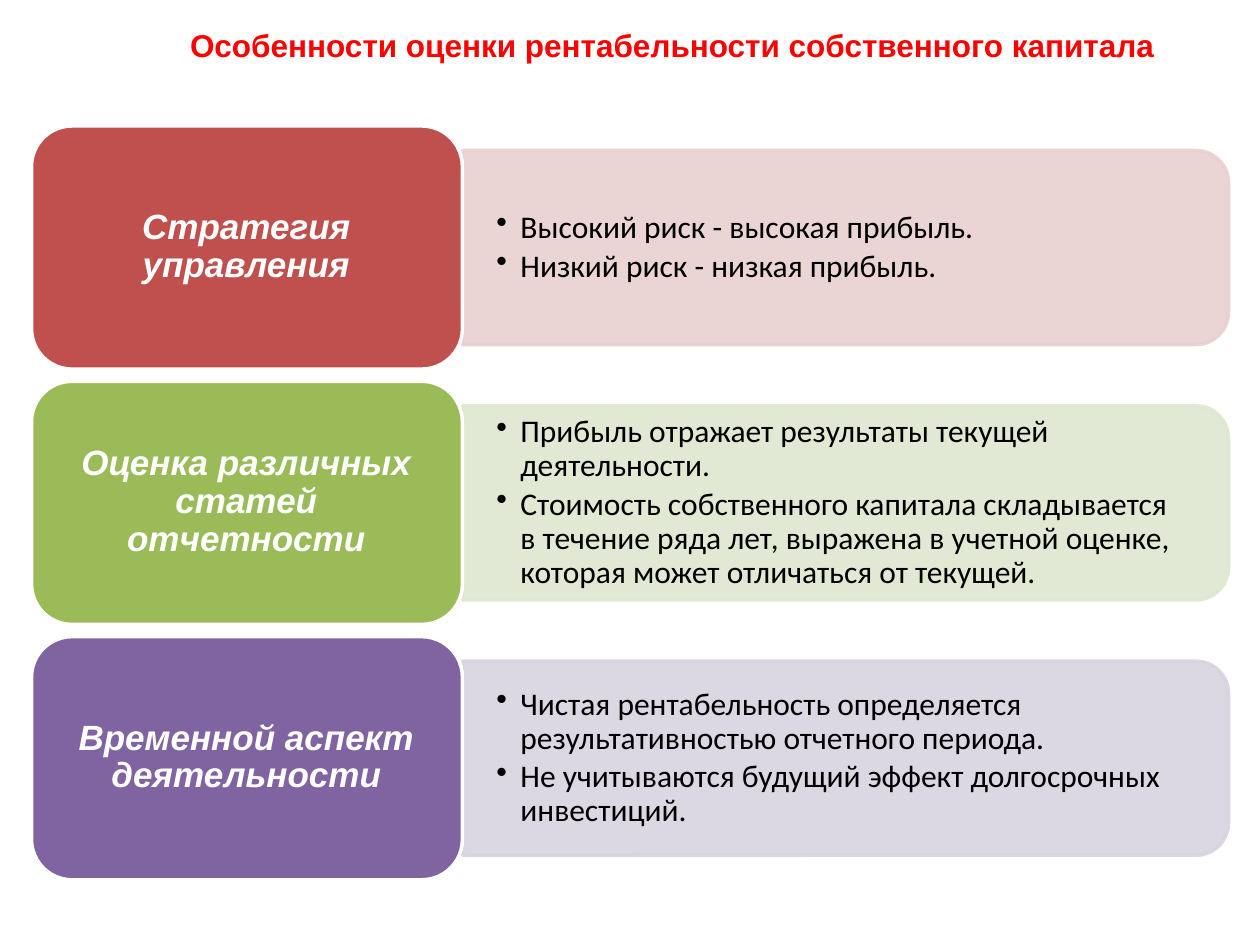
from lxml.etree import SubElement
from pptx import Presentation
from pptx.dml.color import RGBColor
from pptx.enum.shapes import MSO_SHAPE
from pptx.enum.text import MSO_ANCHOR, PP_ALIGN
from pptx.oxml.ns import qn
from pptx.util import Inches, Pt

TOPICS = [
    ("Стратегия управления", "C0504D", "E8D0D0",
     ["Высокий риск - высокая прибыль.",
      "Низкий риск - низкая прибыль."]),
    ("Оценка различных статей отчетности", "9BBB59", "DEE7D1",
     ["Прибыль отражает результаты текущей деятельности.",
      "Стоимость собственного капитала складывается в течение ряда лет, "
      "выражена в учетной оценке, которая может отличаться от текущей."]),
    ("Временной аспект деятельности", "8064A2", "D8D3E0",
     ["Чистая рентабельность определяется результативностью отчетного периода.",
      "Не учитываются будущий эффект долгосрочных инвестиций."]),
]
LEFT, TOP = 0.25, 1
LABEL_WIDTH, LABEL_HEIGHT = 3.42, 1.93
PANEL_WIDTH, PANEL_HEIGHT = 6.08, 1.54
ROW_PITCH = LABEL_HEIGHT * 1.05


def color(hex_value):
    return RGBColor.from_string(hex_value)


def write(paragraph, text, font="Arial", size=18, ink="000000", bold=False,
          italic=False, align=PP_ALIGN.LEFT, spacing=1.0, after=0, bullet=False):
    run = paragraph.add_run()
    run.text = text
    run.font.name, run.font.size = font, Pt(size)
    run.font.bold, run.font.italic = bold, italic
    run.font.color.rgb = color(ink)
    paragraph.alignment = align
    paragraph.line_spacing, paragraph.space_after = spacing, Pt(after)
    if bullet:
        paragraph.level = 1
        properties = paragraph._p.get_or_add_pPr()
        properties.set("marL", str(Inches(0.19)))
        properties.set("indent", str(-Inches(0.19)))
        SubElement(properties, qn("a:buChar"), char="•")


class TopicSlide:
    """Draws titled topic rows on one slide in a shared style."""

    def __init__(self, slide):
        self.shapes = slide.shapes
        self.line_width = Pt(2)

    def block(self, preset, left, top, width, height, fill, line, alpha=None):
        block = self.shapes.add_shape(
            preset, Inches(left), Inches(top), Inches(width), Inches(height))
        block.shadow.inherit = False
        block.fill.solid()
        block.fill.fore_color.rgb = color(fill)
        block.line.color.rgb = color(line)
        block.line.width = self.line_width
        if alpha:
            for tint in block._element.spPr.iter(qn("a:srgbClr")):
                SubElement(tint, qn("a:alpha"), val=str(alpha * 1000))
        return block

    def text(self, left, top, width, height, lines, inset=(0.1, 0.05),
             anchor=MSO_ANCHOR.MIDDLE, **style):
        frame = self.shapes.add_textbox(
            Inches(left), Inches(top), Inches(width), Inches(height)).text_frame
        frame.word_wrap = True
        frame.vertical_anchor = anchor
        frame.margin_left = frame.margin_right = Inches(inset[0])
        frame.margin_top = frame.margin_bottom = Inches(inset[1])
        for index, line in enumerate(lines):
            paragraph = frame.add_paragraph() if index else frame.paragraphs[0]
            write(paragraph, line, **style)

    def panel(self, left, middle, tint, points):
        panel = self.block(
            MSO_SHAPE.ROUND_2_SAME_RECTANGLE,
            left + (PANEL_WIDTH - PANEL_HEIGHT) / 2, middle - PANEL_WIDTH / 2,
            PANEL_HEIGHT, PANEL_WIDTH, tint, tint, alpha=90)
        panel.rotation = 90
        self.text(left, middle - 0.695, 6.01, 1.39, points, inset=(0.27, 0.14),
                  font="Calibri", spacing=0.9, after=2.7, bullet=True)

    def label(self, top, fill, heading):
        self.block(MSO_SHAPE.ROUNDED_RECTANGLE, LEFT, top,
                   LABEL_WIDTH, LABEL_HEIGHT, fill, "FFFFFF")
        self.text(LEFT + 0.09, top + 0.09, 3.23, 1.74, [heading],
                  inset=(0.08, 0.04), size=20, ink="FFFFFF", bold=True,
                  italic=True, align=PP_ALIGN.CENTER, spacing=0.9, after=7)


def main():
    presentation = Presentation()
    presentation.slide_width, presentation.slide_height = Inches(10), Inches(7.5)
    page = TopicSlide(presentation.slides.add_slide(presentation.slide_layouts[6]))
    for row, (heading, fill, tint, points) in enumerate(TOPICS):
        top = TOP + row * ROW_PITCH
        page.panel(LEFT + LABEL_WIDTH, top + LABEL_HEIGHT / 2, tint, points)
        page.label(top, fill, heading)
    page.text(1.41, 0.16, 8.11, 0.4,
              ["Особенности оценки рентабельности собственного капитала"],
              anchor=MSO_ANCHOR.TOP, ink="FF0000", bold=True)
    presentation.save("out.pptx")


if __name__ == "__main__":
    main()
